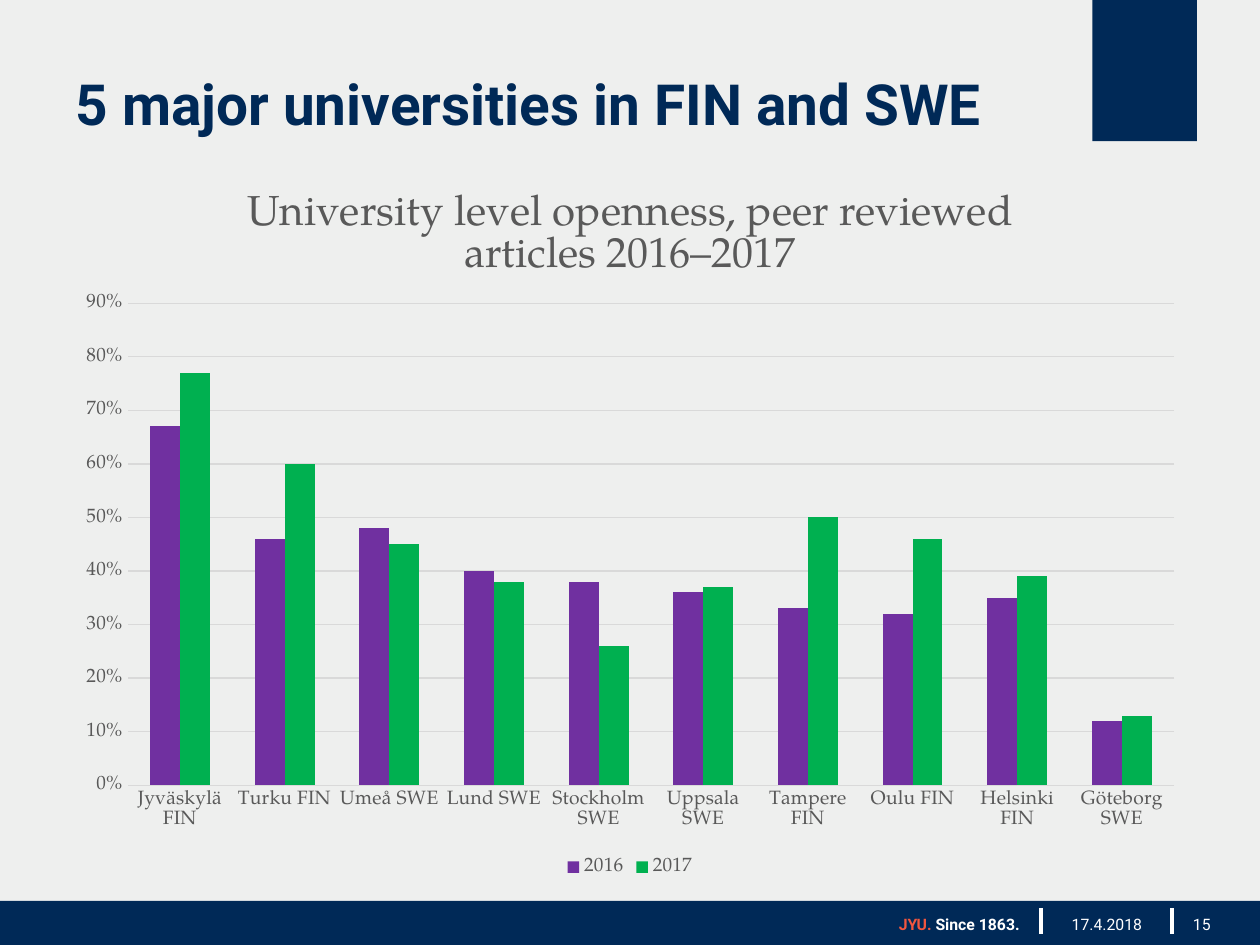
from dataclasses import dataclass

import lxml.etree
import pptx
import pptx.chart.data
import pptx.dml.color
import pptx.enum.chart
import pptx.enum.shapes
import pptx.enum.text
import pptx.oxml.ns
import pptx.util

WIDE, HIGH = 10, 7.5
FOOT, ROW = 7.21, 0.2  # top and height of the footer row
ALIGN = pptx.enum.text.PP_ALIGN
qn = pptx.oxml.ns.qn


@dataclass(frozen=True)
class Theme:
    back: str = "EEEFEE"
    navy: str = "002957"
    red: str = "F1563F"
    white: str = "FFFFFF"
    gray: str = "595959"
    grid: str = "D9D9D9"
    sans: str = "Roboto"
    serif: str = "TeX Gyre Pagella"
    title: float = 32.4
    head: float = 24
    label: float = 11
    small: float = 9


@dataclass(frozen=True)
class Note:
    left: float
    width: float
    align: ALIGN
    runs: tuple  # (text, colour, bold)


@dataclass(frozen=True)
class Year:
    name: str
    color: str
    shares: tuple


THEME = Theme()
BLOCKS = ((8.67, 0, 0.83, 1.12), (0, 7.15, WIDE, 0.35))
BARS = (8.26, 9.3)
NOTES = (
    Note(5.84, 2.35, ALIGN.RIGHT,
         (("JYU. ", THEME.red, True), ("Since 1863.", THEME.white, True))),
    Note(8.33, 0.91, ALIGN.CENTER, (("17.4.2018", THEME.white, False),)),
    Note(9.37, 0.5, ALIGN.LEFT, (("15", THEME.white, False),)),
)
CITIES = ("Jyväskylä FIN", "Turku FIN", "Umeå SWE", "Lund SWE", "Stockholm SWE",
          "Uppsala SWE", "Tampere FIN", "Oulu FIN", "Helsinki FIN", "Göteborg SWE")
YEARS = (
    Year("2016", "7030A0", (0.67, 0.46, 0.48, 0.4, 0.38, 0.36, 0.33, 0.32, 0.35, 0.12)),
    Year("2017", "00B050", (0.77, 0.6, 0.45, 0.38, 0.26, 0.37, 0.5, 0.46, 0.39, 0.13)),
)
# Plot area as shares of the chart frame
PLOT = {"x": 0.057, "y": 0.197, "w": 0.923, "h": 0.669}


def rgb(code: str) -> pptx.dml.color.RGBColor:
    return pptx.dml.color.RGBColor.from_string(code)


def inches(*sizes: float) -> list:
    return [pptx.util.Inches(size) for size in sizes]


def style(font, size: float, color: str, face: str, bold: bool = False) -> None:
    font.size, font.name, font.bold = pptx.util.Pt(size), face, bold
    font.color.rgb = rgb(color)


def block(slide, box: tuple) -> None:
    shape = slide.shapes.add_shape(
        pptx.enum.shapes.MSO_SHAPE.RECTANGLE, *inches(*box))
    shape.shadow.inherit = False
    shape.fill.solid()
    shape.fill.fore_color.rgb = rgb(THEME.navy)
    shape.line.fill.background()


def bar(slide, left: float) -> None:
    line = slide.shapes.add_connector(
        pptx.enum.shapes.MSO_CONNECTOR.STRAIGHT,
        *inches(left, FOOT, left, FOOT + ROW))
    line.line.color.rgb = rgb(THEME.white)
    line.line.width = pptx.util.Pt(2)
    lxml.etree.SubElement(line._element.spPr, qn("a:effectLst"))


def write(slide, note: Note) -> None:
    frame = slide.shapes.add_textbox(
        *inches(note.left, FOOT, note.width, ROW)).text_frame
    frame.word_wrap = True
    para = frame.paragraphs[0]
    para.alignment = note.align
    for text, color, bold in note.runs:
        run = para.add_run()
        run.text = text
        style(run.font, THEME.small, color, THEME.sans, bold)


def head(slide, text: str) -> None:
    title = slide.shapes.title
    title.left, title.top, title.width, title.height = inches(0.5, 0.26, 8.06, 1.12)
    frame = title.text_frame
    frame.text = text
    frame.word_wrap = True
    frame.vertical_anchor = pptx.enum.text.MSO_ANCHOR.MIDDLE
    para = frame.paragraphs[0]
    para.alignment = ALIGN.LEFT
    style(para.runs[0].font, THEME.title, THEME.navy, THEME.sans, True)


def place(chart) -> None:
    area = chart._chartSpace.chart.plotArea
    for old in area.findall(qn("c:layout")):
        area.remove(old)
    layout = lxml.etree.Element(qn("c:layout"))
    area.insert(0, layout)
    manual = lxml.etree.SubElement(layout, qn("c:manualLayout"))
    rules = {"layoutTarget": "inner", "xMode": "edge", "yMode": "edge", **PLOT}
    for name, value in rules.items():
        lxml.etree.SubElement(manual, qn(f"c:{name}")).set("val", str(value))


def graph(slide) -> None:
    kinds = pptx.enum.chart
    data = pptx.chart.data.CategoryChartData(number_format="0%")
    data.categories = CITIES
    for year in YEARS:
        data.add_series(year.name, year.shares)
    chart = slide.shapes.add_chart(
        kinds.XL_CHART_TYPE.COLUMN_CLUSTERED, *inches(0.5, 1.28, 9, 5.72), data).chart
    style(chart.font, THEME.label, THEME.gray, THEME.serif)

    # Heading and legend
    frame = chart.chart_title.text_frame
    frame.text = "University level openness, peer reviewed articles 2016–2017"
    style(frame.paragraphs[0].runs[0].font, THEME.head, THEME.gray, THEME.serif)
    chart.chart_title.include_in_layout = False
    chart.has_legend = True
    chart.legend.position = kinds.XL_LEGEND_POSITION.BOTTOM
    chart.legend.include_in_layout = False
    style(chart.legend.font, THEME.label, THEME.gray, THEME.serif)

    # Axes
    for axis in (chart.category_axis, chart.value_axis):
        axis.major_tick_mark = axis.minor_tick_mark = kinds.XL_TICK_MARK.NONE
        axis.format.line.fill.background()
        style(axis.tick_labels.font, THEME.label, THEME.gray, THEME.serif)
    scale = chart.value_axis
    scale.minimum_scale, scale.maximum_scale, scale.major_unit = 0, 0.9, 0.1
    scale.tick_labels.number_format = "0%"
    scale.tick_labels.number_format_is_linked = False
    scale.has_major_gridlines = True
    scale.major_gridlines.format.line.color.rgb = rgb(THEME.grid)
    scale.major_gridlines.format.line.width = pptx.util.Pt(0.75)

    # Columns
    plot = chart.plots[0]
    plot.gap_width, plot.overlap, plot.vary_by_categories = 150, 0, False
    for series, year in zip(plot.series, YEARS):
        series.format.fill.solid()
        series.format.fill.fore_color.rgb = rgb(year.color)
    place(chart)


def main() -> None:
    deck = pptx.Presentation()
    deck.slide_width, deck.slide_height = inches(WIDE, HIGH)
    slide = deck.slides.add_slide(deck.slide_layouts.get_by_name("Title Only"))
    slide.background.fill.solid()
    slide.background.fill.fore_color.rgb = rgb(THEME.back)
    # Corner block and footer
    for box in BLOCKS:
        block(slide, box)
    for left in BARS:
        bar(slide, left)
    for note in NOTES:
        write(slide, note)
    # Title and chart
    head(slide, "5 major universities in FIN and SWE")
    graph(slide)
    deck.save("out.pptx")


if __name__ == "__main__":
    main()
